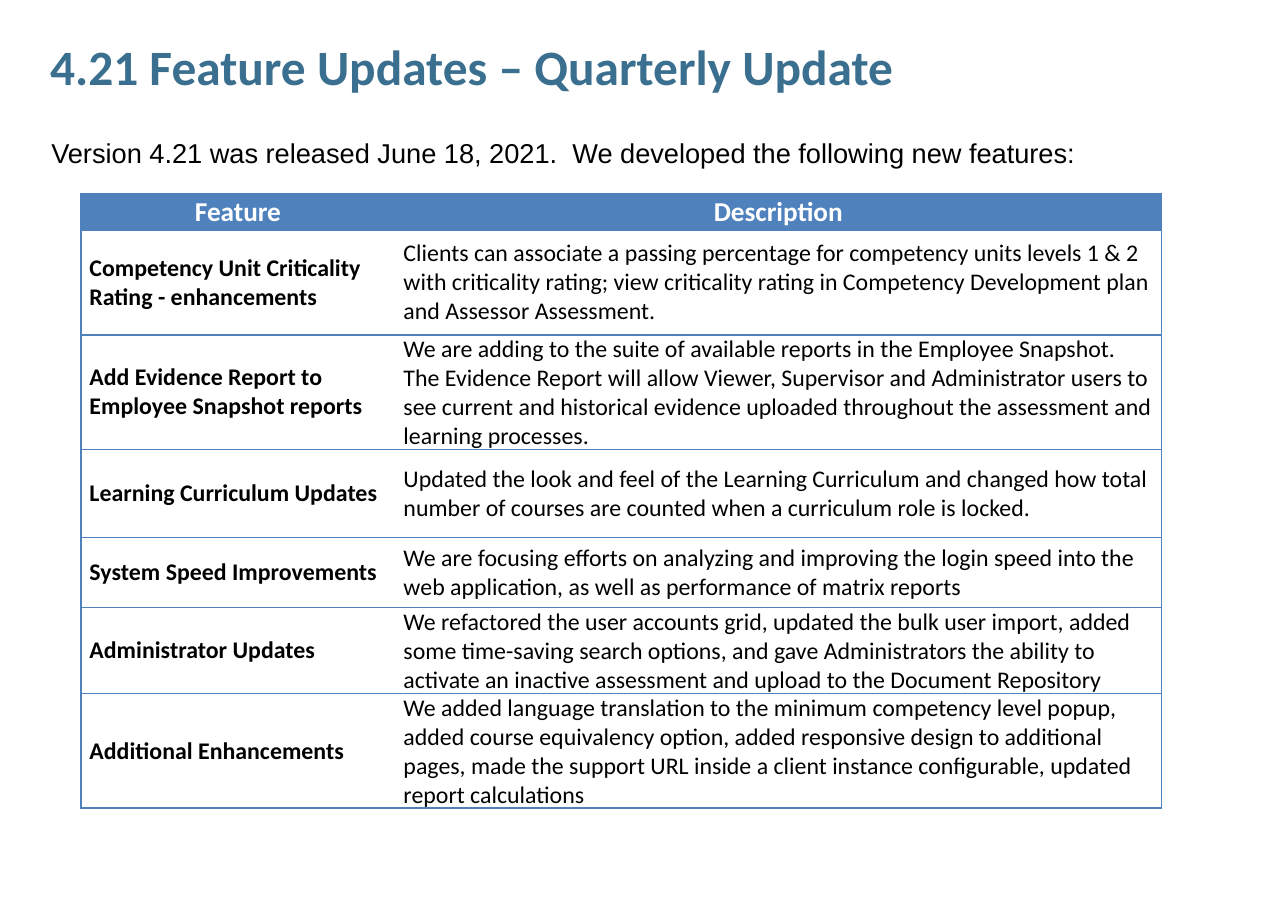
from lxml import etree
from pptx import Presentation
from pptx.dml.color import RGBColor
from pptx.enum.text import MSO_ANCHOR, PP_ALIGN
from pptx.oxml.ns import qn
from pptx.util import Inches, Pt

MIDDLE, TOP = MSO_ANCHOR.MIDDLE, MSO_ANCHOR.TOP
CENTER, LEFT = PP_ALIGN.CENTER, PP_ALIGN.LEFT

COLORS = {"title": "3A6F8F", "text": "000000", "accent": "4F81BD", "paper": "FFFFFF"}
COLUMNS = [2.56, 6.25]
ROWS = [0.3, 0.85, 0.73, 0.72, 0.57, 0.57, 0.57]
# Borders drawn in each column; the divider between the columns stays open.
COLUMN_BORDERS = ["LTB", "RTB"]

FEATURES = [
    ("Feature", "Description"),
    ("Competency Unit Criticality Rating - enhancements",
     "Clients can associate a passing percentage for competency units levels 1 & 2 "
     "with criticality rating; view criticality rating in Competency Development plan "
     "and Assessor Assessment."),
    ("Add Evidence Report to Employee Snapshot reports",
     "We are adding to the suite of available reports in the Employee Snapshot.  "
     "The Evidence Report will allow Viewer, Supervisor and Administrator users to see "
     "current and historical evidence uploaded throughout the assessment and learning "
     "processes."),
    ("Learning Curriculum Updates",
     "Updated the look and feel of the Learning Curriculum and changed how total "
     "number of courses are counted when a curriculum role is locked."),
    ("System Speed Improvements",
     "We are focusing efforts on analyzing and improving the login speed into the "
     "web application, as well as performance of matrix reports"),
    ("Administrator Updates",
     "We refactored the user accounts grid, updated the bulk user import, added "
     "some time-saving search options, and gave Administrators the ability to "
     "activate an inactive assessment and upload to the Document Repository"),
    ("Additional Enhancements",
     "We added language translation to the minimum competency level popup, added "
     "course equivalency option, added responsive design to additional pages, made "
     "the support URL inside a client instance configurable, updated report "
     "calculations"),
]


def color(name):
    return RGBColor.from_string(COLORS[name])


def style_paragraph(p, size, font, ink, bold=False, align=LEFT):
    p.alignment = align
    p.font.size = Pt(size)
    p.font.name = font
    p.font.bold = bold
    p.font.color.rgb = color(ink)


def add_text(s, box, text, size, font, ink, bold=False, anchor=TOP):
    sp = s.shapes.add_textbox(*map(Inches, box))
    tf = sp.text_frame
    tf.word_wrap = True
    tf.vertical_anchor = anchor
    tf.margin_top = tf.margin_bottom = Inches(0.05)
    p = tf.paragraphs[0]
    p.text = text
    style_paragraph(p, size, font, ink, bold)


def set_borders(cell, sides):
    """Draw 1 pt accent lines on the named sides and clear the others."""
    tc_pr = cell._tc.get_or_add_tcPr()
    for side in "LRTB":
        ln = etree.SubElement(tc_pr, qn(f"a:ln{side}"), w=str(Pt(1)))
        if side in sides:
            fill = etree.SubElement(ln, qn("a:solidFill"))
            etree.SubElement(fill, qn("a:srgbClr"), val=COLORS["accent"])
        else:
            etree.SubElement(ln, qn("a:noFill"))


def fill_cell(cell, text, header, bold, sides):
    set_borders(cell, sides)
    cell.fill.solid()
    cell.fill.fore_color.rgb = color("accent" if header else "paper")
    cell.vertical_anchor = MIDDLE
    cell.margin_left = cell.margin_right = Inches(0.07)
    cell.margin_top = cell.margin_bottom = 0
    p = cell.text_frame.paragraphs[0]
    p.text = text
    style_paragraph(p, 16 if header else 14, "Calibri",
                    "paper" if header else "text", bold, CENTER if header else LEFT)


def add_feature_table(s, left, top):
    frame = s.shapes.add_table(len(ROWS), len(COLUMNS), Inches(left), Inches(top),
                               Inches(sum(COLUMNS)), Inches(sum(ROWS)))
    table = frame.table
    table.horz_banding = False
    for column, width in zip(table.columns, COLUMNS):
        column.width = Inches(width)
    for i, (row, height) in enumerate(zip(table.rows, ROWS)):
        row.height = Inches(height)
        for j, cell in enumerate(row.cells):
            header = i == 0
            fill_cell(cell, FEATURES[i][j], header, header or j == 0, COLUMN_BORDERS[j])


def main():
    prs = Presentation()
    prs.slide_width, prs.slide_height = Inches(10.5), Inches(7.5)
    s = prs.slides.add_slide(prs.slide_layouts[6])
    add_text(s, (0.31, 0.17, 9.85, 0.74), "4.21 Feature Updates – Quarterly Update",
             29, "Calibri", "title", bold=True, anchor=MIDDLE)
    add_text(s, (0.32, 1.06, 9.84, 0.37),
             "Version 4.21 was released June 18, 2021.  We developed the following new features:",
             16, "Arial", "text")
    add_feature_table(s, 0.66, 1.58)
    prs.save("out.pptx")


if __name__ == "__main__":
    main()
